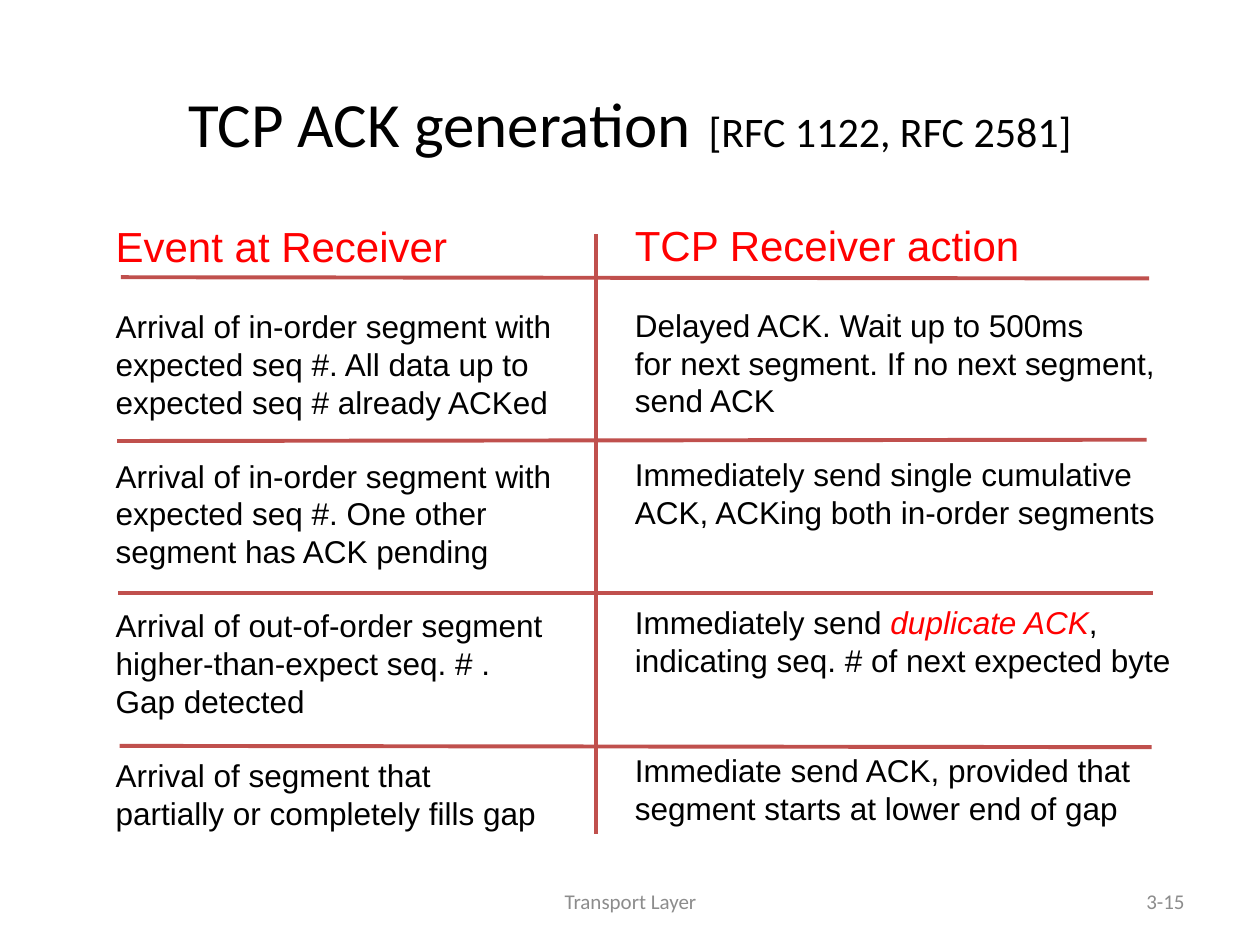
from lxml.etree import SubElement
from pptx import Presentation
from pptx.dml.color import RGBColor
from pptx.enum.shapes import MSO_CONNECTOR as Link
from pptx.enum.text import MSO_ANCHOR as Anchor, PP_ALIGN as Align
from pptx.oxml.ns import qn
from pptx.util import Pt

PX = 9144  # 100 px to the inch
BLACK = RGBColor(0, 0, 0)
RED = RGBColor(0xFF, 0, 0)
GREY = RGBColor(0x8C, 0x8C, 0x8C)
BRICK = RGBColor(0xC0, 0x50, 0x4D)
LINE = 20.7  # height of one 18 pt line, in points
ROW = 4  # lines from the top of one row to the next

deck = Presentation()
deck.slide_width, deck.slide_height = 1000 * PX, 750 * PX
slide = deck.slides.add_slide(deck.slide_layouts[5])
shapes = slide.shapes


def style(par, size, color, face="Arial"):
    font = par.font
    font.size, font.name, font.color.rgb = Pt(size), face, color


def add_box(x, y, w, h):
    return shapes.add_textbox(x * PX, y * PX, w * PX, h * PX).text_frame


# Title
title = shapes.title
title.left, title.top, title.width, title.height = (n * PX for n in (50, 30, 900, 125))
title.text_frame.vertical_anchor = Anchor.MIDDLE
par = title.text_frame.paragraphs[0]
par.alignment = Align.CENTER
style(par, 44, BLACK, "Calibri")
for text, size in [("TCP ACK generation", 36), (" ", 44), ("[RFC 1122, RFC 2581]", 24)]:
    run = par.add_run()
    run.text, run.font.size = text, Pt(size)

# Footer
for x, w, text, align in [(342, 317, "Transport Layer", Align.CENTER),
                          (717, 233, "3-15", Align.RIGHT)]:
    frame = add_box(x, 695, w, 40)
    frame.word_wrap, frame.vertical_anchor = True, Anchor.MIDDLE
    par = frame.paragraphs[0]
    par.text, par.alignment = text, align
    style(par, 12, GREY, "Calibri")

# Columns: a head, then rows of lines; stars enclose a stressed phrase
events = [
    ["Arrival of in-order segment with", "expected seq #. All data up to",
     "expected seq # already ACKed"],
    ["Arrival of in-order segment with", "expected seq #. One other",
     "segment has ACK pending"],
    ["Arrival of out-of-order segment", "higher-than-expect seq. # .", "Gap detected"],
    ["Arrival of segment that", "partially or completely fills gap"],
]
actions = [
    ["Delayed ACK. Wait up to 500ms", "for next segment. If no next segment,", "send ACK"],
    ["Immediately send single cumulative", "ACK, ACKing both in-order segments"],
    ["Immediately send *duplicate ACK*,", "indicating seq. # of next expected byte"],
    ["Immediate send ACK, provided that", "segment starts at lower end of gap"],
]
for x, y, w, head, rows in [(82, 170, 366, "Event at Receiver", events),
                            (494, 169, 445, "TCP Receiver action", actions)]:
    frame = add_box(x, y, w, 547)
    frame.word_wrap = False
    par = frame.paragraphs[0]
    par.text = head
    style(par, 24, RED)
    gap = 1
    for row in rows:
        for i, line in enumerate(row):
            par = frame.add_paragraph()
            style(par, 18, BLACK)
            if i == 0:
                par.space_before = Pt(gap * LINE)
            for j, text in enumerate(line.split("*")):
                run = par.add_run()
                run.text = text
                if j % 2:
                    run.font.italic, run.font.color.rgb = True, RED
        gap = ROW - len(row)

# Rules between the rows and the columns
for ends in [(96, 220, 912, 221), (93, 350, 910, 349), (94, 471, 915, 471),
             (95, 592, 914, 593), (473, 186, 473, 662)]:
    rule = shapes.add_connector(Link.STRAIGHT, *(n * PX for n in ends))
    rule.line.color.rgb, rule.line.width = BRICK, Pt(2.25)
    SubElement(rule._element.spPr, qn("a:effectLst"))

deck.save("out.pptx")
